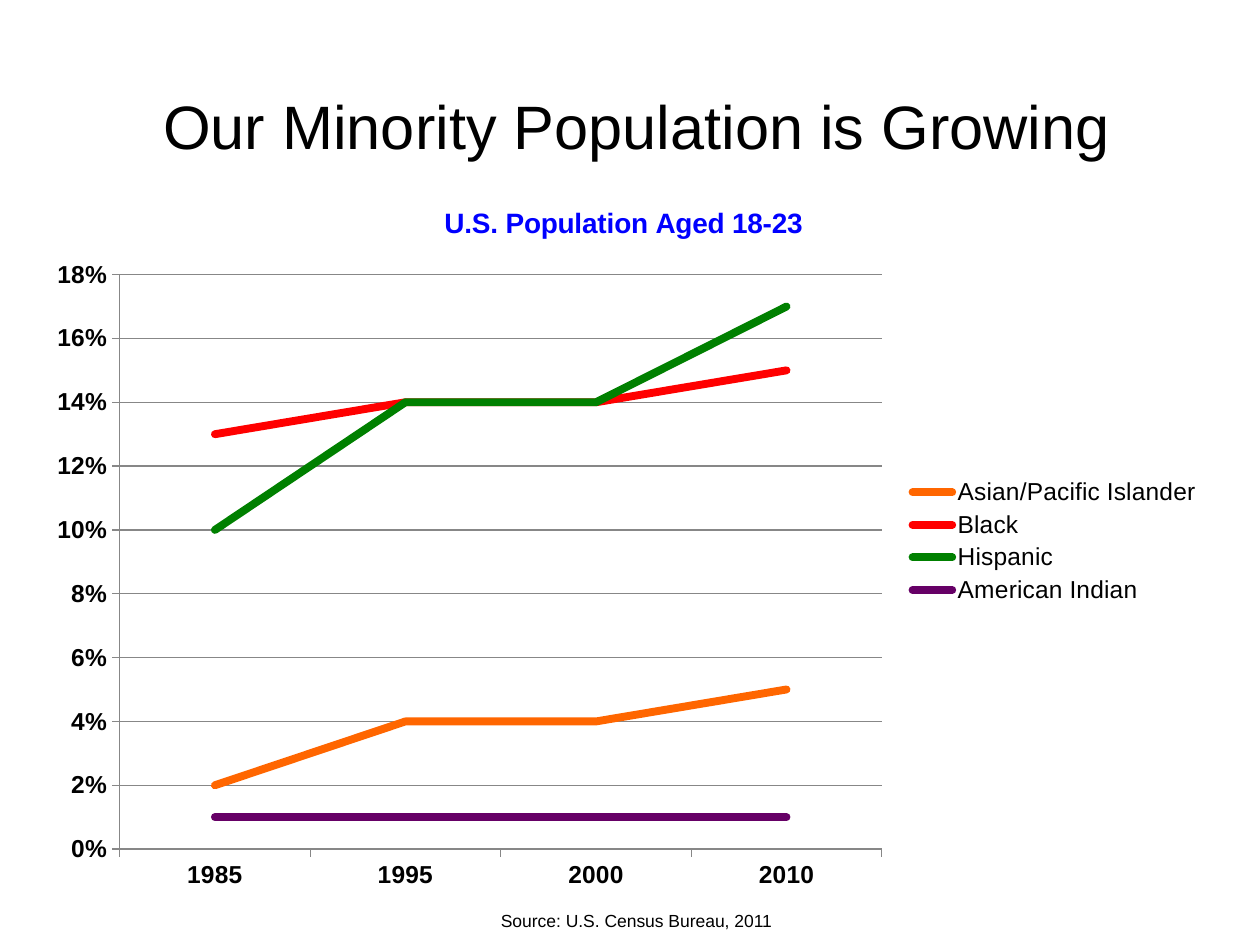
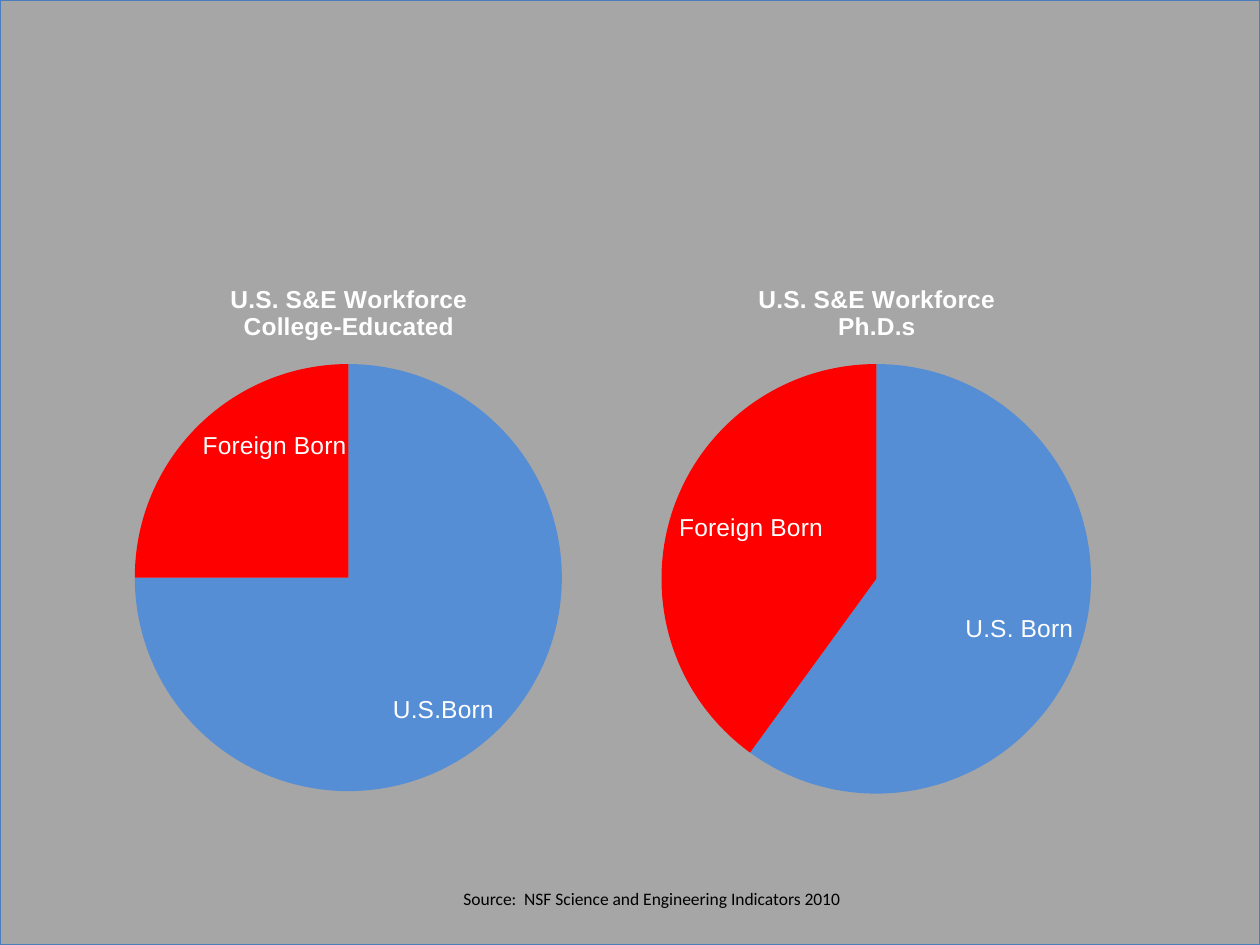
from dataclasses import dataclass

from lxml import etree
from pptx import Presentation
from pptx.chart.chart import Chart
from pptx.chart.data import CategoryChartData
from pptx.dml.color import RGBColor
from pptx.enum.chart import XL_CHART_TYPE, XL_LABEL_POSITION, XL_LEGEND_POSITION
from pptx.enum.chart import XL_MARKER_STYLE, XL_TICK_MARK
from pptx.enum.shapes import MSO_SHAPE
from pptx.enum.text import MSO_ANCHOR, MSO_AUTO_SIZE, PP_ALIGN
from pptx.oxml.ns import qn
from pptx.slide import Slide
from pptx.text.text import TextFrame
from pptx.util import Inches, Pt

LINE, PIE = XL_CHART_TYPE.LINE, XL_CHART_TYPE.PIE
LEFT, CENTER = PP_ALIGN.LEFT, PP_ALIGN.CENTER
TITLE_ONLY, BLANK = 5, 6

COLORS = {
    "black": "000000",
    "white": "FFFFFF",
    "title_blue": "0000FF",
    "orange": "FF6600",
    "red": "FF0000",
    "green": "008000",
    "purple": "660066",
    "pie_blue": "558ED5",
    "backdrop": "A6A6A6",
    "backdrop_edge": "4B7EBC",
    "axis": "878787",
}


@dataclass(frozen=True)
class Area:
    left: float
    top: float
    width: float
    height: float

    def lengths(self) -> tuple[int, int, int, int]:
        return (Inches(self.left), Inches(self.top),
                Inches(self.width), Inches(self.height))


@dataclass(frozen=True)
class Trend:
    name: str
    values: tuple[float, ...]
    color: str


@dataclass(frozen=True)
class Workforce:
    title: str
    area: Area
    plot: Area
    native_label: str
    shares: tuple[int, int]


TRENDS = (
    Trend("Asian/Pacific Islander", (0.02, 0.04, 0.04, 0.05), "orange"),
    Trend("Black", (0.13, 0.14, 0.14, 0.15), "red"),
    Trend("Hispanic", (0.10, 0.14, 0.14, 0.17), "green"),
    Trend("American Indian", (0.01, 0.01, 0.01, 0.01), "purple"),
)

WORKFORCES = (
    Workforce("U.S. S&E Workforce\nCollege-Educated", Area(-0.42, 2.08, 6.38, 4.34),
              Area(1.07, 2.89, 3.39, 3.39), "U.S.Born", (75, 25)),
    Workforce("U.S. S&E Workforce\nPh.D.s", Area(3.92, 2.08, 6.08, 4.36),
              Area(5.25, 2.89, 3.41, 3.41), "U.S. Born", (60, 40)),
)


def rgb(name: str) -> RGBColor:
    return RGBColor.from_string(COLORS[name])


def style_font(font, size: float, color: str = "black", bold: bool = False,
               face: str = "Arial") -> None:
    font.name = face
    font.size = Pt(size)
    font.bold = bold
    font.color.rgb = rgb(color)


def write_text(frame: TextFrame, text: str, *, size: float, color: str = "black",
               bold: bool = False, face: str = "Arial",
               align: PP_ALIGN = CENTER) -> None:
    frame.text = text
    for para in frame.paragraphs:
        para.alignment = align
        for span in para.runs:
            style_font(span.font, size, color, bold, face)


def fit_box(frame: TextFrame) -> None:
    frame.word_wrap = False
    frame.auto_size = MSO_AUTO_SIZE.SHAPE_TO_FIT_TEXT


def add_title(page: Slide, text: str, area: Area) -> None:
    box = page.shapes.title
    box.left, box.top, box.width, box.height = area.lengths()
    fit_box(box.text_frame)
    box.text_frame.vertical_anchor = MSO_ANCHOR.TOP
    write_text(box.text_frame, text, size=35)


def add_source(page: Slide, text: str, area: Area, **style) -> None:
    box = page.shapes.add_textbox(*area.lengths())
    fit_box(box.text_frame)
    write_text(box.text_frame, text, size=10, **style)


def place_plot(chart: Chart, area: Area, plot: Area) -> None:
    plot_area = chart.element.find(".//" + qn("c:plotArea"))
    for old in plot_area.findall(qn("c:layout")):
        plot_area.remove(old)
    layout = etree.Element(qn("c:layout"))
    manual = etree.SubElement(layout, qn("c:manualLayout"))
    settings = {
        "layoutTarget": "inner",
        "xMode": "edge",
        "yMode": "edge",
        "x": (plot.left - area.left) / area.width,
        "y": (plot.top - area.top) / area.height,
        "w": plot.width / area.width,
        "h": plot.height / area.height,
    }
    for tag, value in settings.items():
        etree.SubElement(manual, qn(f"c:{tag}")).set("val", str(value))
    plot_area.insert(0, layout)


def add_chart(page: Slide, kind: XL_CHART_TYPE, data: CategoryChartData, area: Area,
              plot: Area, title: str, title_size: float, title_color: str) -> Chart:
    chart = page.shapes.add_chart(kind, *area.lengths(), data).chart
    style_font(chart.font, 10)
    chart.has_title = True
    write_text(chart.chart_title.text_frame, title, size=title_size,
               color=title_color, bold=True)
    chart.chart_title.include_in_layout = False
    chart.has_legend = False
    place_plot(chart, area, plot)
    return chart


def style_axis(axis) -> None:
    style_font(axis.tick_labels.font, 14, bold=True)
    axis.major_tick_mark = XL_TICK_MARK.OUTSIDE
    axis.minor_tick_mark = XL_TICK_MARK.NONE
    axis.format.line.color.rgb = rgb("axis")
    axis.format.line.width = Pt(0.75)


def add_trend_chart(page: Slide) -> None:
    data = CategoryChartData(number_format="0%")
    data.categories = ["1985", "1995", "2000", "2010"]
    for trend in TRENDS:
        data.add_series(trend.name, trend.values)
    chart = add_chart(page, LINE, data, Area(0.26, 1.42, 9.38, 5.75),
                      Area(0.95, 2.18, 6.05, 4.56), "U.S. Population Aged 18-23",
                      16, "title_blue")
    chart.plots[0].vary_by_categories = False
    for series, trend in zip(chart.plots[0].series, TRENDS):
        series.smooth = False
        series.marker.style = XL_MARKER_STYLE.NONE
        series.format.line.color.rgb = rgb(trend.color)
        series.format.line.width = Pt(4.5)
    for stroke in chart.element.xpath(".//c:ser/c:spPr/a:ln"):
        stroke.set("cap", "rnd")

    style_axis(chart.category_axis)
    scale = chart.value_axis
    style_axis(scale)
    scale.minimum_scale, scale.maximum_scale, scale.major_unit = 0, 0.18, 0.02
    scale.tick_labels.number_format = "0%"
    scale.tick_labels.number_format_is_linked = False
    scale.has_major_gridlines = True
    scale.major_gridlines.format.line.color.rgb = rgb("axis")
    scale.major_gridlines.format.line.width = Pt(0.75)

    chart.has_legend = True
    chart.legend.position = XL_LEGEND_POSITION.RIGHT
    chart.legend.include_in_layout = False
    style_font(chart.legend.font, 14)


def add_workforce_pie(page: Slide, workforce: Workforce) -> None:
    data = CategoryChartData()
    data.categories = [workforce.native_label, "Foreign Born"]
    data.add_series("Series 1", workforce.shares)
    chart = add_chart(page, PIE, data, workforce.area, workforce.plot,
                      workforce.title, 14, "white")
    pie = chart.plots[0]
    pie.vary_by_categories = True
    for index, color in enumerate(("pie_blue", "red")):
        fill = pie.series[0].points[index].format.fill
        fill.solid()
        fill.fore_color.rgb = rgb(color)
    labels = pie.series[0].data_labels
    labels.show_category_name = True
    labels.show_value = False
    labels.show_percentage = False
    labels.number_format = "0%"
    labels.number_format_is_linked = False
    labels.position = XL_LABEL_POSITION.INSIDE_END
    style_font(labels.font, 14, "white")


def add_backdrop(page: Slide, area: Area) -> None:
    backdrop = page.shapes.add_shape(MSO_SHAPE.RECTANGLE, *area.lengths())
    backdrop.shadow.inherit = False
    backdrop.fill.solid()
    backdrop.fill.fore_color.rgb = rgb("backdrop")
    backdrop.line.color.rgb = rgb("backdrop_edge")
    backdrop.line.width = Pt(0.75)


def build_population(deck) -> None:
    page = deck.slides.add_slide(deck.slide_layouts[TITLE_ONLY])
    add_trend_chart(page)
    add_title(page, "Our Minority Population is Growing", Area(1.16, 0.65, 7.79, 0.69))
    add_source(page, "Source: U.S. Census Bureau, 2011", Area(3.86, 7.17, 2.38, 0.27))


def build_workforce(deck) -> None:
    page = deck.slides.add_slide(deck.slide_layouts[BLANK])
    add_backdrop(page, Area(0, 0, 10, 7.5))
    for workforce in WORKFORCES:
        add_workforce_pie(page, workforce)
    add_source(page, "Source:  NSF Science and Engineering Indicators 2010",
               Area(3.58, 7, 3.61, 0.27), face="Calibri", align=LEFT)


def main() -> None:
    deck = Presentation()
    deck.slide_width, deck.slide_height = Inches(10), Inches(7.5)
    build_population(deck)
    build_workforce(deck)
    deck.save("out.pptx")


if __name__ == "__main__":
    main()
